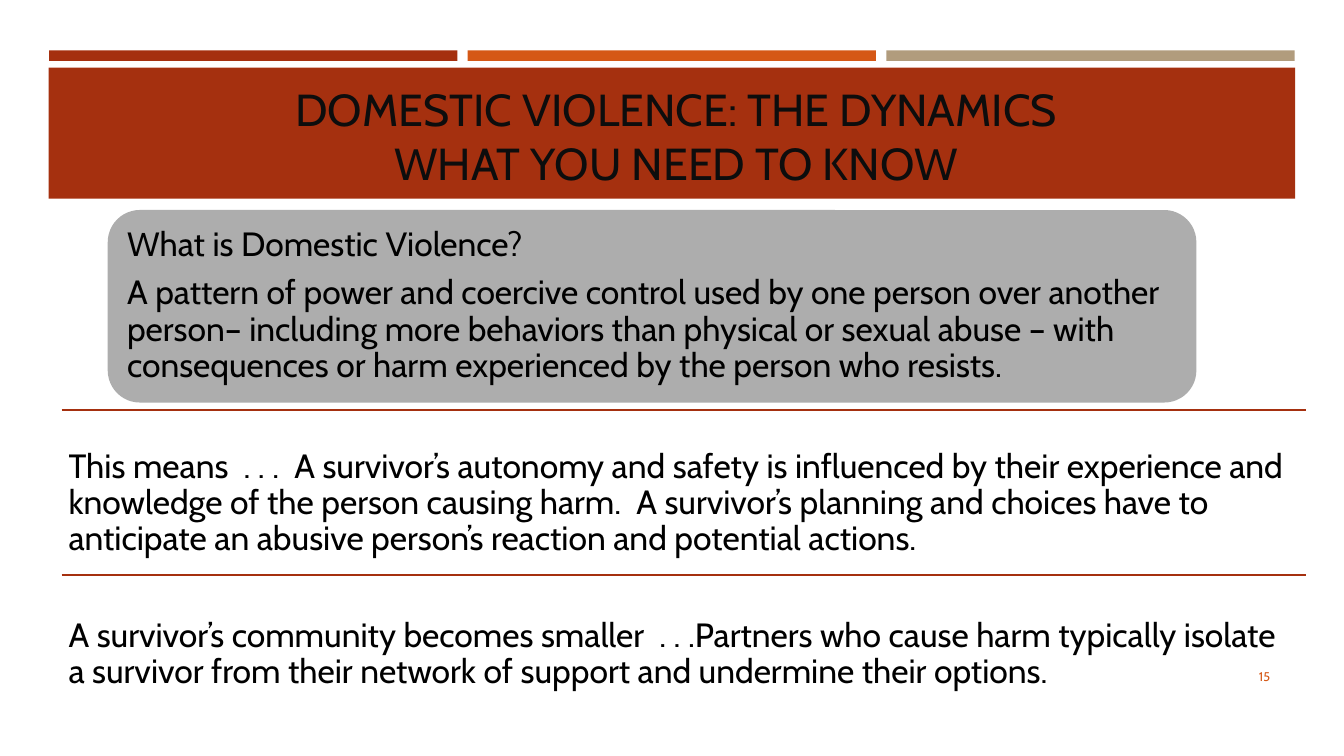
from pptx import Presentation
from pptx.dml.color import RGBColor
from pptx.enum.shapes import MSO_CONNECTOR, MSO_SHAPE
from pptx.enum.text import MSO_ANCHOR, MSO_AUTO_SIZE, PP_ALIGN
from pptx.oxml.ns import qn
from pptx.util import Pt

RUST = RGBColor(0xA5, 0x30, 0x0F)
ORANGE = RGBColor(0xD5, 0x58, 0x16)
TAN = RGBColor(0xB1, 0x9C, 0x7D)
GREY = RGBColor(0xAD, 0xAD, 0xAD)
BLACK = RGBColor(0, 0, 0)
NEAR_BLACK = RGBColor(0x0D, 0x0D, 0x0D)
FONT = "Cabin"
RECTANGLE = MSO_SHAPE.RECTANGLE
ROUNDED = MSO_SHAPE.ROUNDED_RECTANGLE
STRAIGHT = MSO_CONNECTOR.STRAIGHT
TOP, MIDDLE, BOTTOM = MSO_ANCHOR.TOP, MSO_ANCHOR.MIDDLE, MSO_ANCHOR.BOTTOM
LEFT, CENTER, RIGHT = PP_ALIGN.LEFT, PP_ALIGN.CENTER, PP_ALIGN.RIGHT
NO_AUTOFIT = MSO_AUTO_SIZE.NONE

presentation = Presentation()
presentation.slide_width = Pt(960)
presentation.slide_height = Pt(540)
slide = presentation.slides.add_slide(presentation.slide_layouts[5])


def add_block(kind, left, top, width, height, color):
    shape = slide.shapes.add_shape(kind, Pt(left), Pt(top), Pt(width), Pt(height))
    shape.shadow.inherit = False
    shape.fill.solid()
    shape.fill.fore_color.rgb = color
    shape.line.fill.background()
    return shape


def write(shape, paragraphs, size, color, align, anchor, line_spacing=1.0, space_after=0):
    frame = shape.text_frame
    frame.word_wrap = True
    frame.auto_size = NO_AUTOFIT
    frame.vertical_anchor = anchor
    for index, lines in enumerate(paragraphs):
        paragraph = frame.paragraphs[0] if index == 0 else frame.add_paragraph()
        paragraph.alignment = align
        paragraph.line_spacing = line_spacing
        paragraph.space_after = Pt(space_after)
        for number, line in enumerate(lines.split("\n")):
            if number:
                paragraph.add_line_break()
            run = paragraph.add_run()
            run.text = line
            run.font.name = FONT
            run.font.size = Pt(size)
            run.font.color.rgb = color


for column, color in enumerate((RUST, ORANGE, TAN)):
    add_block(RECTANGLE, 35.1 + column * 299, 36, 291.6, 7.5, color)

title_band = add_block(RECTANGLE, 34.8, 48.4, 890.4, 93.6, RUST)

title = slide.shapes.title
title.left, title.top, title.width, title.height = Pt(188), Pt(72), Pt(590.4), Pt(67)
write(title, ["DOMESTIC VIOLENCE: THE DYNAMICS\nWHAT YOU NEED TO KNOW"],
      32, NEAR_BLACK, CENTER, BOTTOM)
slide.shapes._spTree.remove(title._element)
slide.shapes._spTree.append(title._element)

definition = add_block(ROUNDED, 77, 150, 777.6, 137.5, GREY)
definition.text_frame.margin_top = definition.text_frame.margin_bottom = Pt(7.2)
write(definition, [
    "What is Domestic Violence?",
    "A pattern of power and coercive control used by one person over another person– "
    "including more behaviors than physical or sexual abuse – with consequences or harm "
    "experienced by the person who resists.",
], 24, BLACK, LEFT, MIDDLE, 0.9, 8.4)

slide_number = slide.shapes.add_textbox(Pt(831.6), Pt(468.7), Pt(82.8), Pt(28.8))
write(slide_number, ["15"], 9, ORANGE, RIGHT, MIDDLE)

consequences = [
    (293, 28,
     "This means  . . .  A survivor’s autonomy and safety is influenced by their experience "
     "and knowledge of the person causing harm.  A survivor’s planning and choices have to "
     "anticipate an abusive person’s reaction and potential actions."),
    (410.6, 31,
     "A survivor’s community becomes smaller  . . .Partners who cause harm typically isolate "
     "a survivor from their network of support and undermine their options."),
]
for top, margin_top, text in consequences:
    rule = slide.shapes.add_connector(STRAIGHT, Pt(44), Pt(top), Pt(933), Pt(top))
    rule.line.color.rgb = RUST
    rule.line.width = Pt(1.75)
    properties = rule._element.spPr
    properties.append(properties.makeelement(qn("a:effectLst"), {}))

    box = slide.shapes.add_textbox(Pt(44), Pt(top), Pt(889), Pt(117.4))
    frame = box.text_frame
    frame.margin_left = frame.margin_right = frame.margin_bottom = Pt(5)
    frame.margin_top = Pt(margin_top)
    write(box, [text], 24, BLACK, LEFT, TOP, 0.9, 8.4)

presentation.save("out.pptx")
